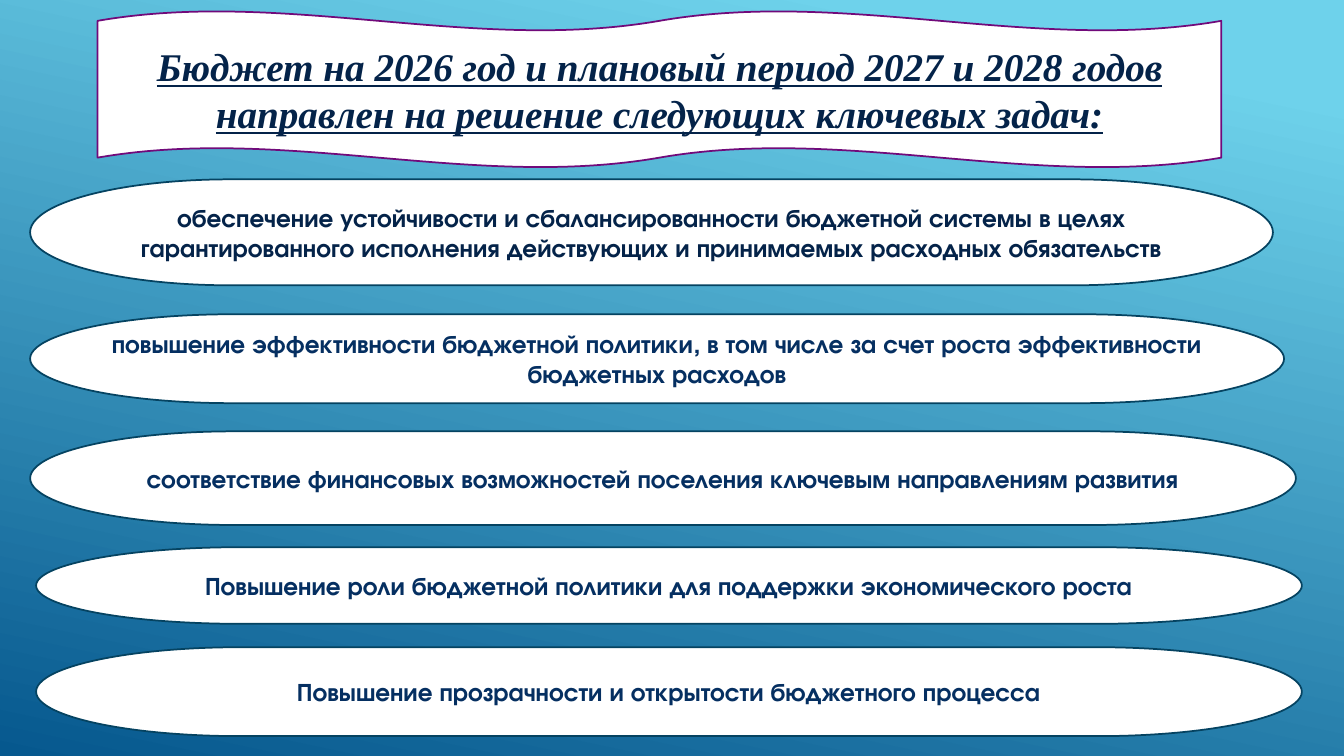
from pptx import Presentation
from pptx.dml.color import RGBColor
from pptx.enum.shapes import MSO_SHAPE
from pptx.enum.text import MSO_ANCHOR, PP_ALIGN
from pptx.util import Cm, Pt

NAVY = "042349"
BLUE = "052F61"
TITLE = "Бюджет на 2026 год и плановый период 2027 и 2028 годов направлен на решение следующих ключевых задач:"
TASKS = [
    ((0.76, 4.52, 31.32, 2.67), NAVY,
     "обеспечение устойчивости и сбалансированности бюджетной системы в целях "
     "гарантированного исполнения действующих и принимаемых расходных обязательств"),
    ((0.76, 7.92, 31.6, 2.24), BLUE,
     "повышение эффективности бюджетной политики, в том числе за счет роста "
     "эффективности бюджетных расходов"),
    ((0.76, 10.87, 31.9, 2.36), BLUE,
     "соответствие финансовых возможностей поселения ключевым направлениям развития"),
    ((0.91, 13.79, 31.9, 1.93), BLUE,
     "Повышение роли бюджетной политики для поддержки экономического роста"),
    ((0.91, 16.31, 31.9, 2.24), BLUE,
     "Повышение прозрачности и открытости бюджетного процесса"),
]


def color(value):
    return RGBColor.from_string(value)


def paint_background(page):
    fill = page.background.fill
    fill.gradient()
    fill.gradient_angle = 258
    for stop, position, shade in zip(fill.gradient_stops, (0.1, 1), ("6ED2EB", "06588E")):
        stop.position = position
        stop.color.rgb = color(shade)


def add_panel(page, kind, box, outline, text, typeface, size, ink):
    panel = page.shapes.add_shape(kind, *[Cm(length) for length in box])
    panel.shadow.inherit = False
    panel.fill.solid()
    panel.fill.fore_color.rgb = color("FFFFFF")
    panel.line.color.rgb = color(outline)
    panel.line.width = Pt(1.25)
    frame = panel.text_frame
    frame.word_wrap = True
    frame.vertical_anchor = MSO_ANCHOR.MIDDLE
    frame.text = text
    para = frame.paragraphs[0]
    para.alignment = PP_ALIGN.CENTER
    font = para.runs[0].font
    font.name = typeface
    font.size = Pt(size)
    font.bold = True
    font.color.rgb = color(ink)
    return font


def add_title(page, box):
    font = add_panel(page, MSO_SHAPE.DOUBLE_WAVE, box, "710A7A", TITLE,
                     "Times New Roman", 28, NAVY)
    font.italic = True
    font.underline = True


def add_task(page, box, ink, text):
    add_panel(page, MSO_SHAPE.FLOWCHART_TERMINATOR, box, "054361", text,
              "TeX Gyre Adventor", 18, ink)


def main():
    deck = Presentation()
    deck.slide_width = Cm(33.87)
    deck.slide_height = Cm(19.05)
    page = deck.slides.add_slide(deck.slide_layouts[6])
    paint_background(page)
    add_title(page, (2.46, 0.28, 28.32, 3.94))
    for box, ink, text in TASKS:
        add_task(page, box, ink, text)
    deck.save("out.pptx")


if __name__ == "__main__":
    main()
